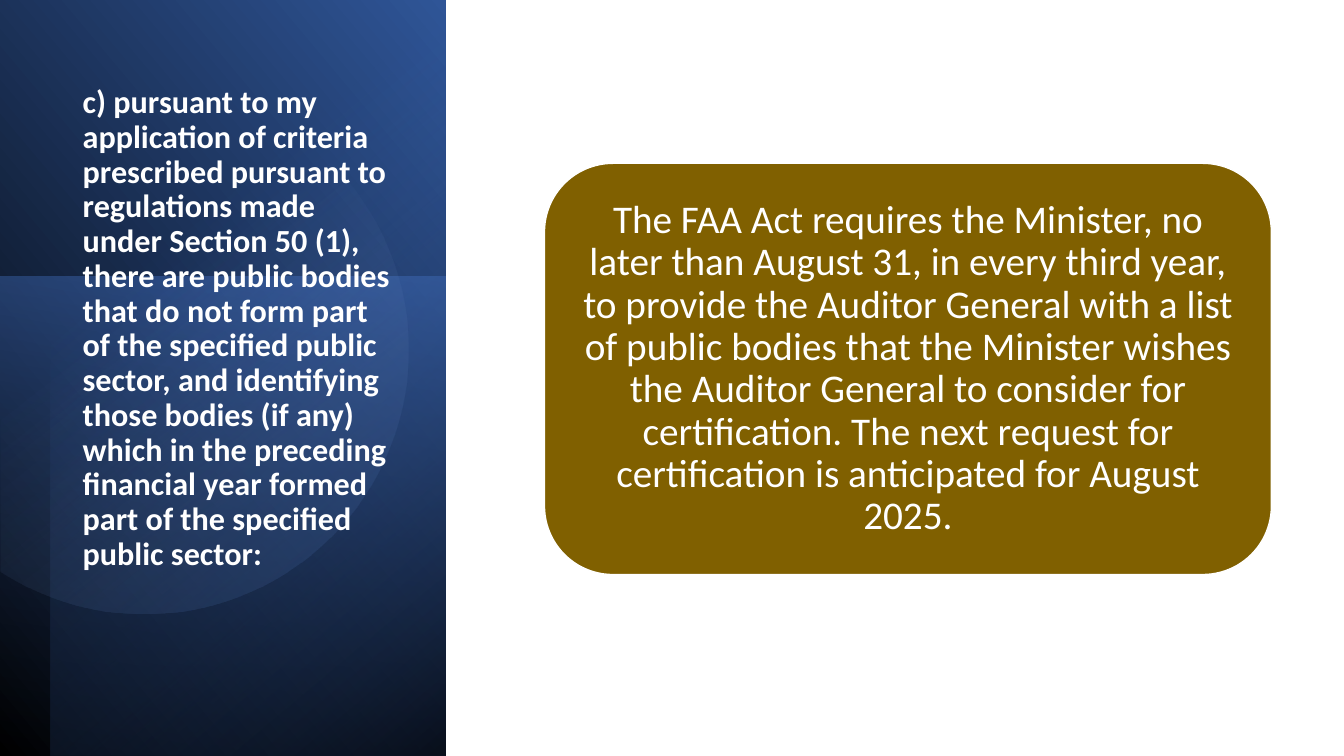
"""Build a slide with a layered gradient title panel and a rounded statement box."""
from dataclasses import dataclass
from math import cos, radians, sin

from pptx import Presentation
from pptx.dml.color import RGBColor
from pptx.enum.shapes import MSO_SHAPE
from pptx.enum.text import MSO_ANCHOR, MSO_AUTO_SIZE, PP_ALIGN
from pptx.oxml import parse_xml
from pptx.oxml.ns import nsdecls, qn
from pptx.util import Inches, Pt

RECTANGLE = MSO_SHAPE.RECTANGLE
ROUNDED_RECTANGLE = MSO_SHAPE.ROUNDED_RECTANGLE
TOP = MSO_ANCHOR.TOP
MIDDLE = MSO_ANCHOR.MIDDLE
LEFT = PP_ALIGN.LEFT
CENTER = PP_ALIGN.CENTER
NO_AUTOFIT = MSO_AUTO_SIZE.NONE


@dataclass(frozen=True)
class Theme:
    font: str = "Calibri"
    title_size: float = 23
    statement_size: float = 28
    white: str = "FFFFFF"
    black: str = "000000"
    gold: str = "806000"
    blue: str = "4472C4"
    deep_blue: str = "2F5597"
    navy: str = "203864"
    pale_blue: str = "8FAADC"


THEME = Theme()

TITLE = (
    "c) pursuant to my application of criteria prescribed pursuant to regulations made "
    "under Section 50 (1), there are public bodies that do not form part of the specified "
    "public sector, and identifying those bodies (if any) which in the preceding financial "
    "year formed part of the specified public sector:"
)
STATEMENT = (
    "The FAA Act requires the Minister, no later than August 31, in every third year, "
    "to provide the Auditor General with a list of public bodies that the Minister wishes "
    "the Auditor General to consider for certification. The next request for certification "
    "is anticipated for August 2025."
)
TITLE_BOX = (0.72, 0.8, 3.29, 5.59)
STATEMENT_BOX = (5.4, 1.62, 7.21, 4.08)

PANEL_LAYERS = [
    {"box": (-1.55, 1.55, 7.52, 4.42), "rotation": 90, "flipped": True, "angle": 310,
     "stops": [(0, THEME.black, 100), (100, THEME.deep_blue, 100)]},
    {"box": (-0.17, 2.91, 4.76, 4.42), "rotation": 270, "flipped": False, "angle": 190,
     "stops": [(0, THEME.blue, 50), (100, THEME.navy, 0)]},
    {"box": (-1.29, 1.79, 7.5, 3.92), "rotation": 270, "flipped": True, "angle": 220,
     "stops": [(0, THEME.black, 59), (69, THEME.blue, 0)]},
]
DISC = {"center": (1.43, 3.47), "radius": 2.62, "half_sweep": 123, "angle": 52,
        "stops": [(39, THEME.pale_blue, 0), (100, THEME.deep_blue, 26)]}


def fill_gradient(shape, stops, angle):
    shape.shadow.inherit = False
    shape.line.fill.background()
    shape.fill.background()
    stop_xml = "".join(
        f'<a:gs pos="{position * 1000}"><a:srgbClr val="{color}">'
        f'<a:alpha val="{opacity * 1000}"/></a:srgbClr></a:gs>'
        for position, color, opacity in stops
    )
    gradient = parse_xml(
        f'<a:gradFill {nsdecls("a")} rotWithShape="1"><a:gsLst>{stop_xml}</a:gsLst>'
        f'<a:lin ang="{angle * 60000}" scaled="0"/></a:gradFill>'
    )
    properties = shape.element.spPr
    properties.replace(properties.find(qn("a:noFill")), gradient)


def add_panel_layer(slide, layer):
    shape = slide.shapes.add_shape(RECTANGLE, *map(Inches, layer["box"]))
    shape.rotation = layer["rotation"]
    if layer["flipped"]:
        shape.element.spPr.find(qn("a:xfrm")).set("flipH", "1")
    fill_gradient(shape, layer["stops"], layer["angle"])


def add_disc(slide):
    center_x, center_y = DISC["center"]
    sweep = DISC["half_sweep"]
    points = [
        (Inches(center_x + DISC["radius"] * cos(radians(degree))),
         Inches(center_y + DISC["radius"] * sin(radians(degree))))
        for degree in range(-sweep, sweep + 1, 2)
    ]
    builder = slide.shapes.build_freeform(*points[0])
    builder.add_line_segments(points[1:], close=True)
    fill_gradient(builder.convert_to_shape(), DISC["stops"], DISC["angle"])


def write_text(shape, text, size, bold, alignment, anchor):
    frame = shape.text_frame
    frame.text = text
    frame.word_wrap = True
    frame.auto_size = NO_AUTOFIT
    frame.vertical_anchor = anchor
    paragraph = frame.paragraphs[0]
    paragraph.alignment = alignment
    paragraph.line_spacing = 0.9
    paragraph.font.name = THEME.font
    paragraph.font.size = Pt(size)
    paragraph.font.bold = bold
    paragraph.font.color.rgb = RGBColor.from_string(THEME.white)


def add_title(slide):
    title = slide.shapes.title
    title.left, title.top, title.width, title.height = map(Inches, TITLE_BOX)
    title.element.getparent().append(title.element)
    write_text(title, TITLE, THEME.title_size, True, LEFT, TOP)


def add_statement(slide):
    shape = slide.shapes.add_shape(ROUNDED_RECTANGLE, *map(Inches, STATEMENT_BOX))
    shape.shadow.inherit = False
    shape.fill.solid()
    shape.fill.fore_color.rgb = RGBColor.from_string(THEME.gold)
    shape.line.color.rgb = RGBColor.from_string(THEME.white)
    shape.line.width = Pt(1)
    frame = shape.text_frame
    frame.margin_left = frame.margin_right = Inches(0.12)
    frame.margin_top = frame.margin_bottom = Inches(0.12)
    write_text(shape, STATEMENT, THEME.statement_size, False, CENTER, MIDDLE)


def main():
    presentation = Presentation()
    presentation.slide_width = Inches(13.33)
    presentation.slide_height = Inches(7.5)
    slide = presentation.slides.add_slide(presentation.slide_layouts.get_by_name("Title Only"))
    for layer in PANEL_LAYERS:
        add_panel_layer(slide, layer)
    add_disc(slide)
    add_title(slide)
    add_statement(slide)
    presentation.save("out.pptx")


if __name__ == "__main__":
    main()
